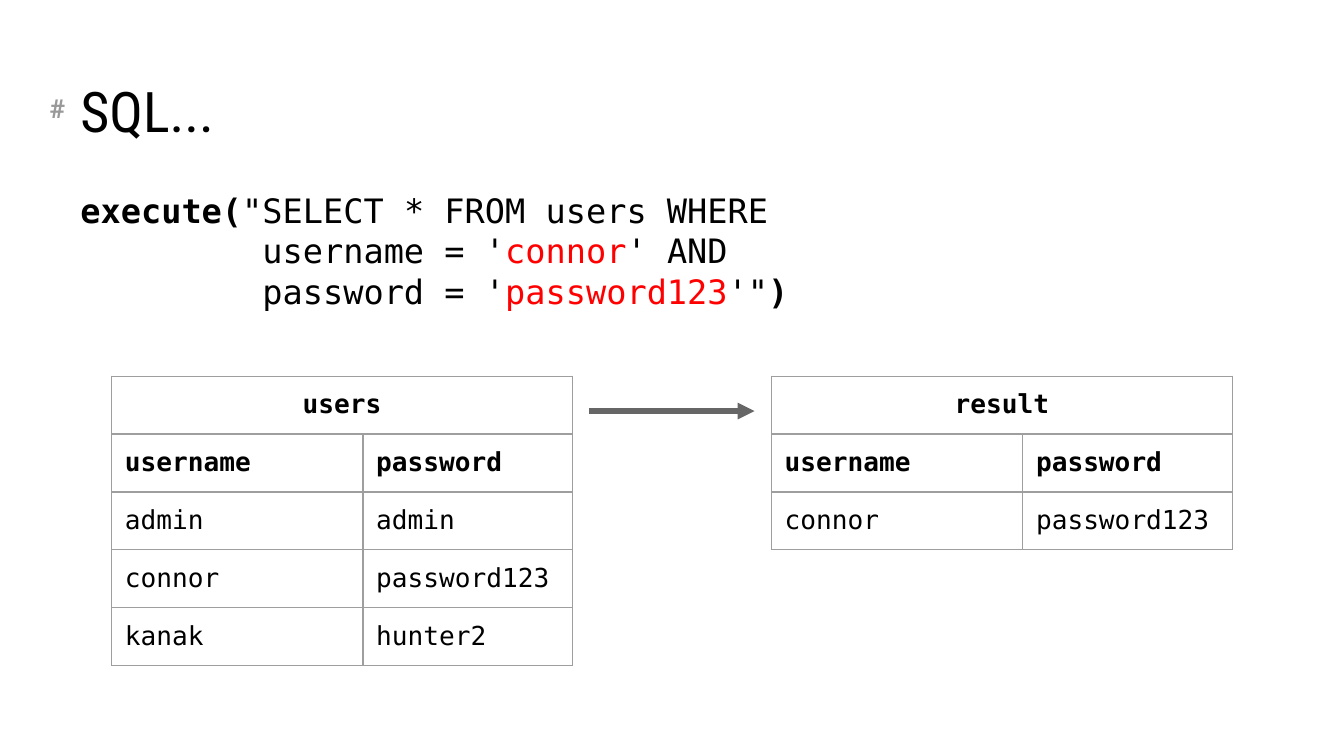
"""Build a slide that shows a SQL login query with its source and result tables."""
from lxml import etree
from pptx import Presentation
from pptx.dml.color import RGBColor
from pptx.enum.shapes import MSO_CONNECTOR
from pptx.enum.text import MSO_ANCHOR, PP_ALIGN
from pptx.oxml.ns import qn
from pptx.util import Cm, Pt

STRAIGHT = MSO_CONNECTOR.STRAIGHT
TOP, BOTTOM = MSO_ANCHOR.TOP, MSO_ANCHOR.BOTTOM
CENTER = PP_ALIGN.CENTER

MONO = "DejaVu Sans Mono"
BLACK, RED, GRAY = "000000", "FF0000", "999999"
BORDER, ARROW = "9E9E9E", "666666"
INSET = Cm(0.25)

QUERY = [
    [("execute(", BLACK, True), ('"SELECT * FROM users WHERE', BLACK, False)],
    [("username = '", BLACK, False), ("connor", RED, False), ("' AND", BLACK, False)],
    [("password = '", BLACK, False), ("password123", RED, False),
     ("'\"", BLACK, False), (")", BLACK, True)],
]
QUERY_INDENT = Cm(3.44)

HEADER = ("username", "password")
TABLES = [
    (2.11, "users", [("admin", "admin"), ("connor", "password123"), ("kanak", "hunter2")]),
    (14.58, "result", [("connor", "password123")]),
]
TABLE_TOP, ROW_HEIGHT = 7.11, 1.09
COLUMN_WIDTHS = (4.75, 3.96)
ARROW_GAP, ARROW_Y = 0.32, 7.77


def color(value):
    return RGBColor.from_string(value)


def style_run(run, font, size, value, bold=False):
    run.font.name = font
    run.font.size = Pt(size)
    run.font.color.rgb = color(value)
    run.font.bold = bold


def add_text_box(slide, left, top, width, height, anchor=TOP):
    shape = slide.shapes.add_textbox(Cm(left), Cm(top), Cm(width), Cm(height))
    frame = shape.text_frame
    frame.word_wrap = True
    frame.vertical_anchor = anchor
    frame.margin_left = frame.margin_right = INSET
    frame.margin_top = frame.margin_bottom = INSET
    return frame


def add_label(slide, box, text, font, size, value, bold=False, anchor=TOP):
    frame = add_text_box(slide, *box, anchor=anchor)
    frame.text = text
    style_run(frame.paragraphs[0].runs[0], font, size, value, bold)


def add_query(slide):
    paragraph = add_text_box(slide, 1.27, 3.33, 22.86, 10.34).paragraphs[0]
    paragraph.line_spacing = Pt(21.7)
    paragraph.space_after = Pt(10)
    properties = paragraph._p.get_or_add_pPr()
    properties.set("marL", str(QUERY_INDENT))
    properties.set("indent", str(-QUERY_INDENT))
    for number, line in enumerate(QUERY):
        if number:
            paragraph.add_line_break()
        for text, value, bold in line:
            run = paragraph.add_run()
            run.text = text
            style_run(run, MONO, 18, value, bold)


def add_borders(cell):
    properties = cell._tc.get_or_add_tcPr()
    for position, side in enumerate(("a:lnL", "a:lnR", "a:lnT", "a:lnB")):
        line = etree.Element(qn(side), w=str(Pt(0.75)))
        fill = etree.SubElement(line, qn("a:solidFill"))
        etree.SubElement(fill, qn("a:srgbClr"), val=BORDER)
        properties.insert(position, line)


def add_data_table(slide, left, name, records):
    rows = [(name, ""), HEADER, *records]
    shape = slide.shapes.add_table(
        len(rows), len(HEADER), Cm(left), Cm(TABLE_TOP),
        Cm(sum(COLUMN_WIDTHS)), Cm(ROW_HEIGHT * len(rows)))
    table = shape.table
    table.first_row = table.horz_banding = False
    for column, width in zip(table.columns, COLUMN_WIDTHS):
        column.width = Cm(width)
    table.cell(0, 0).merge(table.cell(0, 1))
    for row_number, row in enumerate(rows):
        table.rows[row_number].height = Cm(ROW_HEIGHT)
        for column_number, text in enumerate(row):
            cell = table.cell(row_number, column_number)
            cell.fill.background()
            add_borders(cell)
            cell.margin_left = cell.margin_right = INSET
            cell.margin_top = cell.margin_bottom = INSET
            if text:
                cell.text_frame.text = text
                style_run(cell.text_frame.paragraphs[0].runs[0], MONO, 14, BLACK, row_number < 2)
    table.cell(0, 0).text_frame.paragraphs[0].alignment = CENTER


def add_arrow(slide):
    start = TABLES[0][0] + sum(COLUMN_WIDTHS) + ARROW_GAP
    end = TABLES[1][0] - ARROW_GAP
    arrow = slide.shapes.add_connector(STRAIGHT, Cm(start), Cm(ARROW_Y), Cm(end), Cm(ARROW_Y))
    arrow.line.color.rgb = color(ARROW)
    arrow.line.width = Pt(3)
    etree.SubElement(arrow.line._get_or_add_ln(), qn("a:tailEnd"), type="triangle")
    etree.SubElement(arrow._element.spPr, qn("a:effectLst"))


def main():
    presentation = Presentation()
    presentation.slide_width, presentation.slide_height = Cm(25.4), Cm(14.29)
    slide = presentation.slides.add_slide(presentation.slide_layouts[6])
    add_label(slide, (0.69, 1.5, 0.79, 1.19), "#", "Roboto", 14, GRAY, bold=True)
    add_label(slide, (1.27, 0.58, 22.86, 2.39), "SQL...", "Roboto Condensed", 30, BLACK,
              anchor=BOTTOM)
    add_query(slide)
    for left, name, records in TABLES:
        add_data_table(slide, left, name, records)
    add_arrow(slide)
    presentation.save("out.pptx")


if __name__ == "__main__":
    main()
